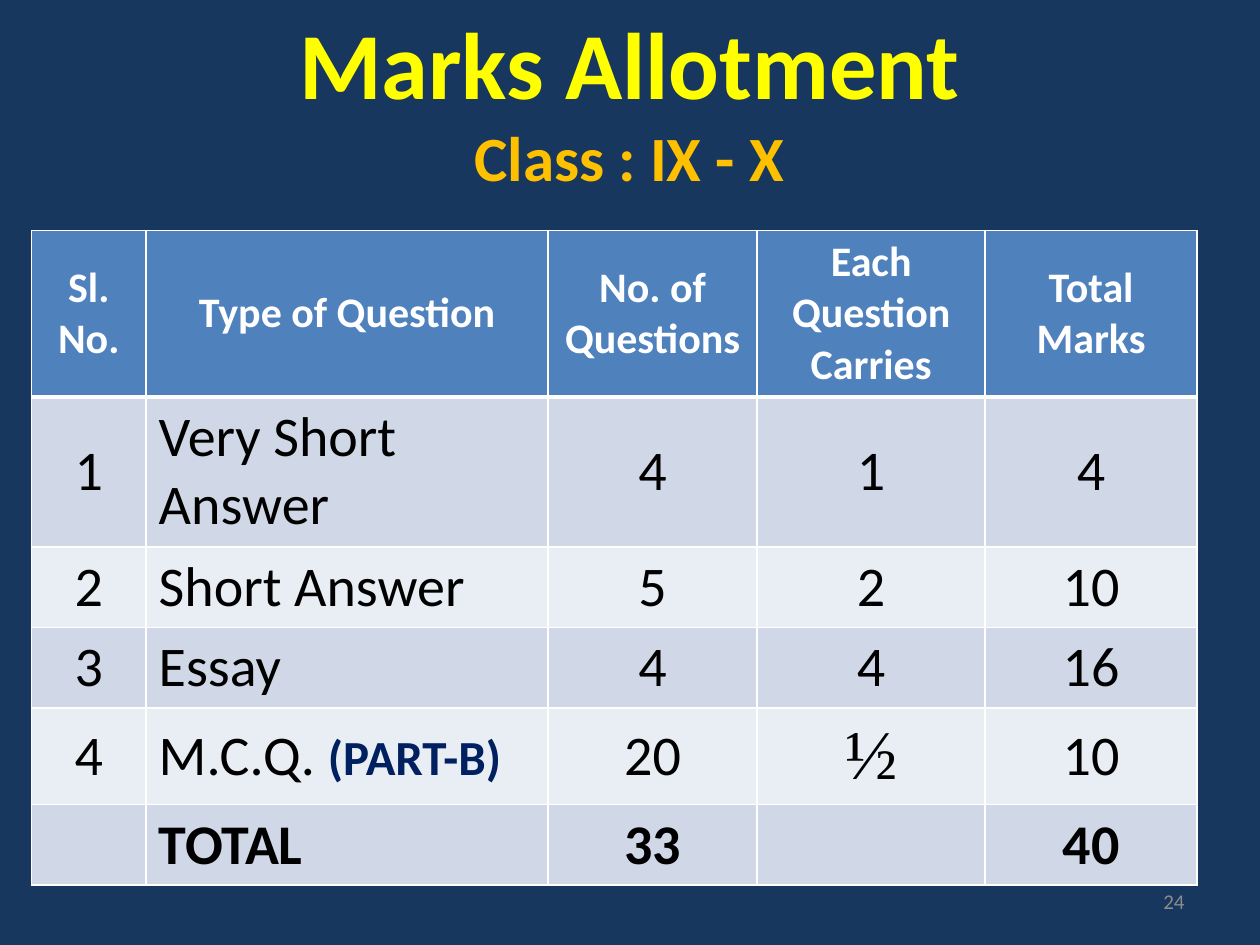
import pptx
import pptx.util
import pptx.dml.color
import pptx.enum.text
import lxml.etree

Inch, Pt = pptx.util.Inches, pptx.util.Pt
ALIGN = pptx.enum.text.PP_ALIGN
MID = pptx.enum.text.MSO_ANCHOR.MIDDLE
TOP = pptx.enum.text.MSO_ANCHOR.TOP

# Content
TITLE = ("Marks Allotment", "Class : IX - X")
HEAD = ["Sl. No.", "Type of Question", "No. of Questions",
        "Each Question Carries", "Total Marks"]
ROWS = [
    ["1", "Very Short Answer", "4", "1", "4"],
    ["2", "Short Answer", "5", "2", "10"],
    ["3", "Essay", "4", "4", "16"],
    ["4", "M.C.Q. ", "20", "½", "10"],
    ["", "TOTAL", "33", "", "40"],
]
PART = "(PART-B)"
PAGE = "24"

# Style and grid
HUES = {"back": "17375E", "title": "FFFF00", "class": "FFC000",
        "white": "FFFFFF", "black": "000000", "head": "4F81BD",
        "odd": "D0D8E8", "even": "E9EDF4", "part": "002060",
        "page": "8C8C8C"}
WIDE, HIGH = 10, 7.5
LEFT, UPPER = 0.25, 1.83
COLS = [0.91, 3.19, 1.66, 1.81, 1.68]
TALL = [1.32, 1.19, 0.64, 0.64, 0.71, 0.64]


def hue(name):
    return pptx.dml.color.RGBColor.from_string(HUES[name])


def style(run, size, color, bold=False, face="Calibri"):
    font = run.font
    font.size, font.bold, font.name = Pt(size), bold, face
    font.color.rgb = hue(color)


def add_text(slide, box, text, align):
    frame = slide.shapes.add_textbox(*map(Inch, box)).text_frame
    frame.word_wrap = True
    frame.vertical_anchor = MID
    para = frame.paragraphs[0]
    para.text = text
    para.alignment = align
    return para.runs


def add_edges(cell, sizes):
    props = cell._tc.get_or_add_tcPr()
    space = props.nsmap["a"]
    for side, size in zip("LRTB", sizes):
        line = lxml.etree.SubElement(props, f"{{{space}}}ln{side}", w=str(Pt(size)))
        fill = lxml.etree.SubElement(line, f"{{{space}}}solidFill")
        lxml.etree.SubElement(fill, f"{{{space}}}srgbClr", val=HUES["white"])


def fill_cell(cell, row, col, text):
    add_edges(cell, (1, 1, 3 if row == 1 else 1, 3 if row == 0 else 1))
    cell.fill.solid()
    cell.fill.fore_color.rgb = hue("head" if row == 0 else "odd" if row % 2 else "even")
    named = row > 0 and col == 1
    cell.vertical_anchor = TOP if named and row < 4 else MID
    para = cell.text_frame.paragraphs[0]
    para.text = text
    para.alignment = ALIGN.LEFT if named else ALIGN.CENTER
    for run in para.runs:
        if row == 0:
            style(run, 24, "white", True)
        elif text == "½":
            style(run, 40, "black", face="Times New Roman")
        else:
            style(run, 32, "black", row == len(ROWS))
    if text == "M.C.Q. ":
        run = para.add_run()
        run.text = PART
        style(run, 28, "part", True)


def main():
    deck = pptx.Presentation()
    deck.slide_width, deck.slide_height = Inch(WIDE), Inch(HIGH)
    slide = deck.slides.add_slide(deck.slide_layouts[6])
    slide.background.fill.solid()
    slide.background.fill.fore_color.rgb = hue("back")

    # Title, with the class on a second line
    top, sub = add_text(slide, (0.12, 0.08, 9.75, 1.42), "\v".join(TITLE), ALIGN.CENTER)
    style(top, 54, "title", True)
    style(sub, 36, "class", True)

    # Marks table
    data = [HEAD] + ROWS
    box = map(Inch, (LEFT, UPPER, sum(COLS), sum(TALL)))
    table = slide.shapes.add_table(len(data), len(COLS), *box).table
    for col, width in zip(table.columns, COLS):
        col.width = Inch(width)
    for row, height in zip(table.rows, TALL):
        row.height = Inch(height)
    for r, line in enumerate(data):
        for c, text in enumerate(line):
            fill_cell(table.cell(r, c), r, c, text)

    # Page number
    for run in add_text(slide, (7.17, 6.95, 2.33, 0.4), PAGE, ALIGN.RIGHT):
        style(run, 12, "page")

    deck.save("out.pptx")


if __name__ == "__main__":
    main()
